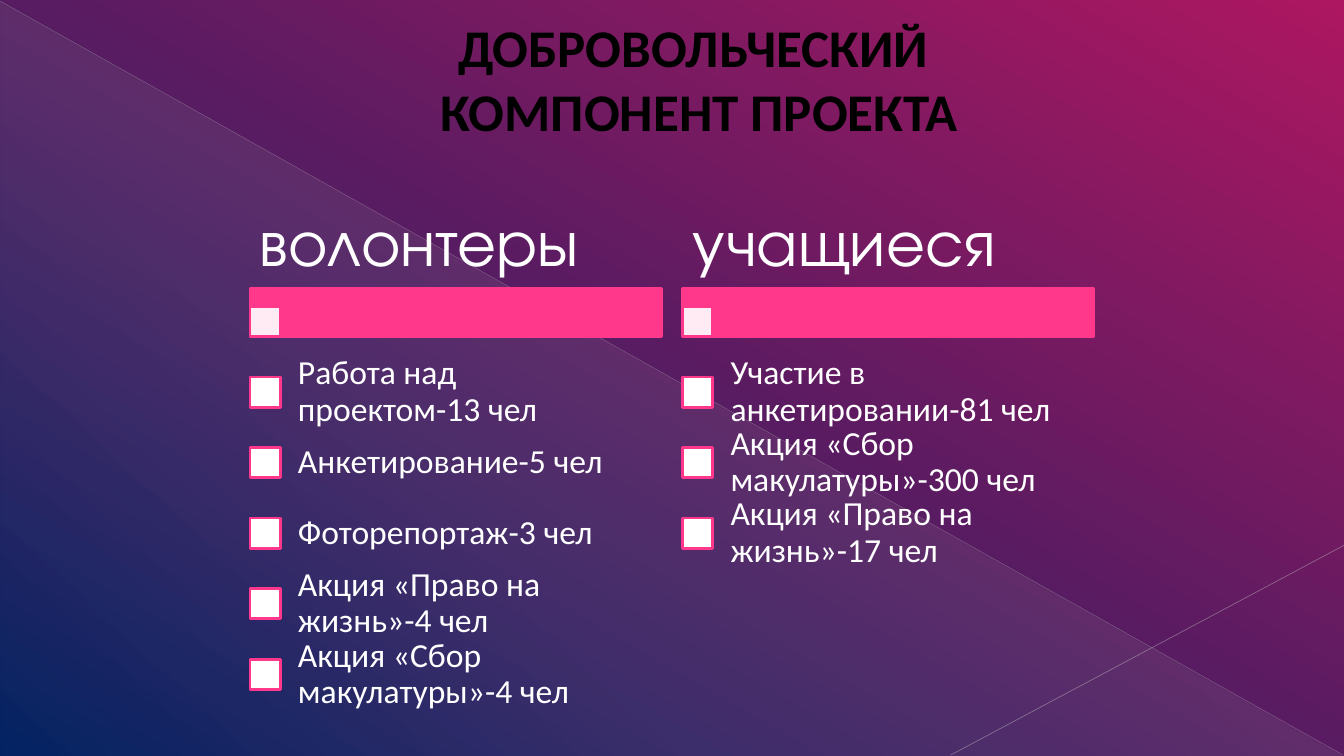
from dataclasses import dataclass

from lxml.etree import SubElement
from pptx import Presentation
from pptx.dml.color import RGBColor
from pptx.enum.shapes import MSO_CONNECTOR, MSO_SHAPE
from pptx.enum.text import MSO_ANCHOR, MSO_AUTO_SIZE, PP_ALIGN
from pptx.oxml import parse_xml
from pptx.oxml.ns import nsdecls, qn
from pptx.util import Inches, Pt

BLACK = RGBColor(0x00, 0x00, 0x00)
WHITE = RGBColor(0xFF, 0xFF, 0xFF)
PINK = RGBColor(0xFF, 0x38, 0x8C)
CRIMSON = RGBColor(0xAD, 0x17, 0x61)
NAVY = RGBColor(0x00, 0x20, 0x60)
TITLE_OUTLINE = RGBColor(0xB1, 0x27, 0x61)
VEIL = RGBColor(0xD2, 0xD2, 0xD2)
LONG_RAY = RGBColor(0xBF, 0xBF, 0xBF)
SHORT_RAY = RGBColor(0xC6, 0xC6, 0xC6)

BODY_FONT = "Calibri"
HEADING_FONT = "TeX Gyre Adventor"
COLUMN_WIDTH = 4.08
BAR_TOP = 2.86
BAR_HEIGHT = 0.48
BOX_SIZE = 0.3
ROW_TOP = 3.54
ROW_HEIGHT = 0.7
LABEL_INDENT = 0.285


@dataclass(frozen=True)
class Column:
    left: float
    heading: str
    items: tuple[str, ...]


@dataclass(frozen=True)
class Ray:
    start: tuple[float, float]
    end: tuple[float, float]
    color: RGBColor
    width: float
    opacity: int


COLUMNS = (
    Column(2.48, "волонтеры", (
        "Работа над проектом-13 чел",
        "Анкетирование-5 чел",
        "Фоторепортаж-3 чел",
        "Акция «Право на жизнь»-4 чел",
        "Акция «Сбор макулатуры»-4 чел",
    )),
    Column(6.77, "учащиеся", (
        "Участие в анкетировании-81 чел",
        "Акция «Сбор макулатуры»-300 чел",
        "Акция «Право на жизнь»-17 чел",
    )),
)
RAYS = (
    Ray((0, 0.01), (13.32, 7.49), LONG_RAY, 0.39, 35),
    Ray((13.33, 5.41), (9.43, 7.49), SHORT_RAY, 0.47, 45),
)


def set_opacity(element, percent: int) -> None:
    color = next(element.iter(qn("a:srgbClr")))
    SubElement(color, qn("a:alpha"), val=str(percent * 1000))


def set_gradient(fill, element, stops, clockwise_angle: float) -> None:
    fill.gradient()
    fill.gradient_angle = 360 - clockwise_angle
    stop_list = next(element.iter(qn("a:gsLst")))
    for stop in list(stop_list):
        stop_list.remove(stop)
    for position, color, opacity in stops:
        stop = SubElement(stop_list, qn("a:gs"), pos=str(position * 1000))
        SubElement(stop, qn("a:srgbClr"), val=str(color))
        set_opacity(stop, opacity)


def write_text(shape, text: str, *, size: float, font: str = BODY_FONT,
               color: RGBColor = WHITE, bold: bool = False,
               align: PP_ALIGN = PP_ALIGN.LEFT,
               anchor: MSO_ANCHOR = MSO_ANCHOR.MIDDLE,
               insets: tuple[float, float, float, float] = (0.1, 0.05, 0.1, 0.05),
               line_spacing: float = 1.0):
    frame = shape.text_frame
    frame.word_wrap = True
    frame.auto_size = MSO_AUTO_SIZE.NONE
    frame.vertical_anchor = anchor
    (frame.margin_left, frame.margin_top,
     frame.margin_right, frame.margin_bottom) = map(Inches, insets)
    frame.text = text
    paragraph = frame.paragraphs[0]
    paragraph.alignment = align
    paragraph.line_spacing = line_spacing
    for run in paragraph.runs:
        run.font.name = font
        run.font.size = Pt(size)
        run.font.bold = bold
        run.font.color.rgb = color
    return paragraph


def add_rectangle(slide, left: float, top: float, width: float, height: float,
                  color: RGBColor):
    shape = slide.shapes.add_shape(MSO_SHAPE.RECTANGLE, *map(Inches, (left, top, width, height)))
    shape.shadow.inherit = False
    shape.fill.solid()
    shape.fill.fore_color.rgb = color
    shape.line.color.rgb = PINK
    shape.line.width = Pt(2)
    return shape


def add_label(slide, left: float, top: float, width: float, height: float,
              text: str, **text_format) -> None:
    box = slide.shapes.add_textbox(*map(Inches, (left, top, width, height)))
    write_text(box, text, line_spacing=0.9, **text_format)


def add_ray(slide, ray: Ray) -> None:
    line = slide.shapes.add_connector(
        MSO_CONNECTOR.STRAIGHT, *map(Inches, (*ray.start, *ray.end)))
    line.line.color.rgb = ray.color
    line.line.width = Pt(ray.width)
    set_opacity(line.element, ray.opacity)
    SubElement(line.element.spPr, qn("a:effectLst"))


def add_backdrop(slide) -> None:
    set_gradient(slide.background.fill, slide.element,
                 ((0, CRIMSON, 100), (100, NAVY, 100)), 120)
    triangle = slide.shapes.add_shape(
        MSO_SHAPE.RIGHT_TRIANGLE, *map(Inches, (0.01, 0.02, 13.31, 7.48)))
    triangle.shadow.inherit = False
    triangle.line.fill.background()
    set_gradient(triangle.fill, triangle.element,
                 ((0, VEIL, 10), (70, VEIL, 8), (100, VEIL, 1)), 133)
    for ray in RAYS:
        add_ray(slide, ray)


def add_title(slide) -> None:
    title = slide.shapes.title
    title.left, title.top, title.width, title.height = map(Inches, (0.67, 0.29, 12, 1.53))
    paragraph = write_text(
        title, "ДОБРОВОЛЬЧЕСКИЙ \vКОМПОНЕНТ ПРОЕКТА", size=37.8, color=BLACK,
        bold=True, align=PP_ALIGN.CENTER, anchor=MSO_ANCHOR.BOTTOM,
        insets=(0.1, 0, 0.1, 0.41))
    paragraph._p.get_or_add_pPr().set("marL", str(Inches(0.53)))
    for run in paragraph.runs:
        run.font._element.insert(0, parse_xml(
            f'<a:ln {nsdecls("a")} w="{Pt(0.5)}"><a:solidFill>'
            f'<a:srgbClr val="{TITLE_OUTLINE}"/></a:solidFill></a:ln>'))
    title.element.getparent().append(title.element)


def add_column(slide, column: Column) -> None:
    add_rectangle(slide, column.left, BAR_TOP, COLUMN_WIDTH, BAR_HEIGHT, PINK)
    bar_box = add_rectangle(slide, column.left, BAR_TOP + BAR_HEIGHT - BOX_SIZE,
                            BOX_SIZE, BOX_SIZE, WHITE)
    set_opacity(bar_box.element, 90)
    add_label(slide, column.left, 2, COLUMN_WIDTH, 0.86, column.heading,
              size=47, font=HEADING_FONT, insets=(0.1, 0.07, 0.1, 0.07))
    for row, item in enumerate(column.items):
        top = ROW_TOP + row * ROW_HEIGHT
        add_rectangle(slide, column.left, top + (ROW_HEIGHT - BOX_SIZE) / 2,
                      BOX_SIZE, BOX_SIZE, WHITE)
        add_label(slide, column.left + LABEL_INDENT, top,
                  COLUMN_WIDTH - LABEL_INDENT, ROW_HEIGHT, item,
                  size=24, insets=(0.19, 0.19, 0.19, 0.19))


def main() -> None:
    presentation = Presentation()
    presentation.slide_width = Inches(13.33)
    presentation.slide_height = Inches(7.5)
    slide = presentation.slides.add_slide(presentation.slide_layouts[5])
    add_backdrop(slide)
    add_title(slide)
    for column in COLUMNS:
        add_column(slide, column)
    presentation.save("out.pptx")


if __name__ == "__main__":
    main()
